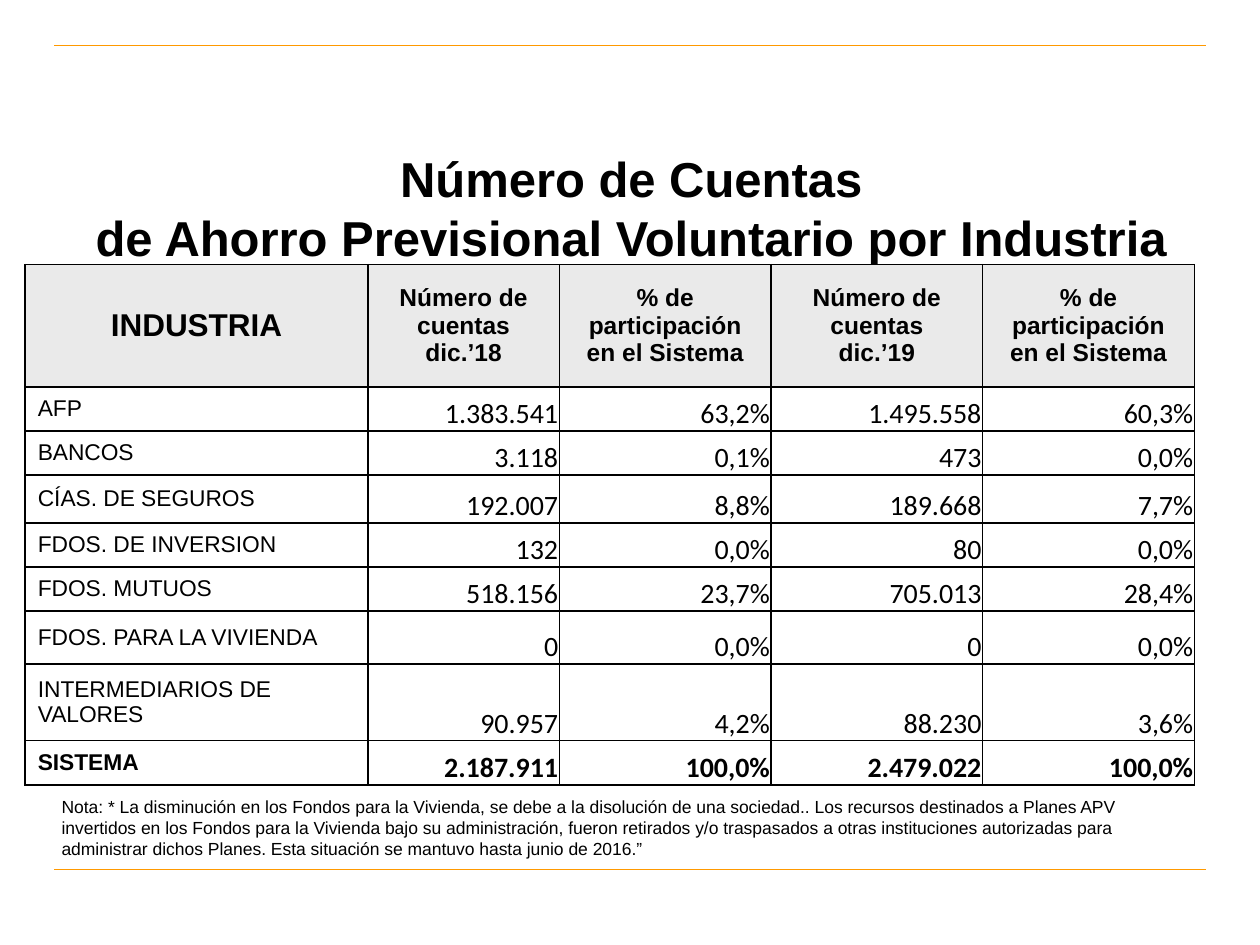
from pptx import Presentation
from pptx.dml.color import RGBColor as Rgb
from pptx.enum.shapes import MSO_CONNECTOR as Link
from pptx.enum.text import MSO_ANCHOR as Anchor, PP_ALIGN as Align
from pptx.oxml import parse_xml as parse
from pptx.oxml.ns import nsdecls as names
from pptx.util import Inches, Pt

WIDE, TALL = Inches(10), Inches(7.5)
BLACK, WHITE, GREY, AMBER = "000000", "FFFFFF", "EAEAEA", "FF9900"
COLS = [27.2, 15.2, 16.8, 16.8, 16.8]
ROWS = [12.93, 4.67, 4.67, 5.07, 4.67, 4.67, 5.6, 8.13, 4.67]
SHARE = "% de participación en el Sistema"
DATA = [
    ["INDUSTRIA", "Número de cuentas\ndic.’18", SHARE, "Número de cuentas\ndic.’19", SHARE],
    ["AFP", "1.383.541", "63,2%", "1.495.558", "60,3%"],
    ["BANCOS", "3.118", "0,1%", "473", "0,0%"],
    ["CÍAS. DE SEGUROS", "192.007", "8,8%", "189.668", "7,7%"],
    ["FDOS. DE INVERSION", "132", "0,0%", "80", "0,0%"],
    ["FDOS. MUTUOS", "518.156", "23,7%", "705.013", "28,4%"],
    ["FDOS. PARA LA VIVIENDA", "0", "0,0%", "0", "0,0%"],
    ["INTERMEDIARIOS DE VALORES", "90.957", "4,2%", "88.230", "3,6%"],
    ["SISTEMA", "2.187.911", "100,0%", "2.479.022", "100,0%"],
]
TITLE = "Número de Cuentas\vde Ahorro Previsional Voluntario por Industria"
NOTE = (
    "Nota: * La disminución en los Fondos para la Vivienda, se debe a la disolución de "
    "una sociedad.. Los recursos destinados a Planes APV invertidos en los Fondos para la "
    "Vivienda bajo su administración, fueron retirados y/o traspasados a otras instituciones "
    "autorizadas para administrar dichos Planes. Esta situación se mantuvo hasta junio de 2016.”"
)


def color(code):
    return Rgb.from_string(code)


def across(share):
    return round(WIDE * share / 100)


def down(share):
    return round(TALL * share / 100)


def style(frame, size, align=Align.LEFT, bold=False, face="Arial"):
    for para in frame.paragraphs:
        para.alignment = align
        for run in para.runs:
            font = run.font
            font.name, font.size, font.bold = face, Pt(size), bold
            font.color.rgb = color(BLACK)


def add_rule(slide, y):
    rule = slide.shapes.add_connector(
        Link.STRAIGHT, across(4.3), down(y), across(95.7), down(y))
    rule.line.color.rgb = color(AMBER)
    rule.line.width = Pt(0.75)
    rule._element.spPr.append(parse(f"<a:effectLst {names('a')}/>"))


def add_text(slide, text, x, y, width, height, size, **look):
    box = slide.shapes.add_textbox(across(x), down(y), across(width), down(height))
    frame = box.text_frame
    frame.word_wrap = True
    frame.text = text
    style(frame, size, **look)
    return frame


def add_edges(cell):
    props = cell._tc.get_or_add_tcPr()
    for side in "LRTB":
        props.append(parse(
            f'<a:ln{side} {names("a")} w="{Pt(1)}"><a:solidFill>'
            f'<a:srgbClr val="{BLACK}"/></a:solidFill></a:ln{side}>'))


def set_fill(cell, code):
    if code:
        cell.fill.solid()
        cell.fill.fore_color.rgb = color(code)
    else:
        cell.fill.background()


def set_cell(cell, text, row, col):
    head, label = row == 0, col == 0
    cell.text_frame.text = text
    add_edges(cell)
    if head or label:
        cell.vertical_anchor = Anchor.MIDDLE
        cell.margin_left = cell.margin_right = Inches(0.1)
        cell.margin_top = cell.margin_bottom = Inches(0.05)
    else:
        cell.vertical_anchor = Anchor.BOTTOM
        cell.margin_left = cell.margin_right = cell.margin_top = Inches(0.01)
        cell.margin_bottom = 0
    if head:
        set_fill(cell, GREY)
        style(cell.text_frame, 18 if label else 14, Align.CENTER, True)
        return
    bold = row == len(DATA) - 1
    set_fill(cell, WHITE if label or col % 2 else None)
    if label:
        style(cell.text_frame, 13, bold=bold)
    else:
        style(cell.text_frame, 16, Align.RIGHT, bold, "Calibri")


def add_grid(slide):
    grid = slide.shapes.add_table(
        len(ROWS), len(COLS), across(2), down(28), across(sum(COLS)), down(sum(ROWS))).table
    grid.first_row = grid.horz_banding = False
    for col, share in zip(grid.columns, COLS):
        col.width = across(share)
    for row, share in zip(grid.rows, ROWS):
        row.height = down(share)
    for r, line in enumerate(DATA):
        for c, text in enumerate(line):
            set_cell(grid.cell(r, c), text, r, c)


def main():
    deck = Presentation()
    deck.slide_width, deck.slide_height = WIDE, TALL
    slide = deck.slides.add_slide(deck.slide_layouts[6])
    for y in (4.8, 92):
        add_rule(slide, y)
    title = add_text(slide, TITLE, 5.1, 15.47, 90, 16.67, 28, align=Align.CENTER, bold=True)
    title.margin_top = Inches(0.02)
    add_grid(slide)
    add_text(slide, NOTE, 3.9, 83.6, 89.8, 8.13, 10)
    deck.save("out.pptx")


if __name__ == "__main__":
    main()
